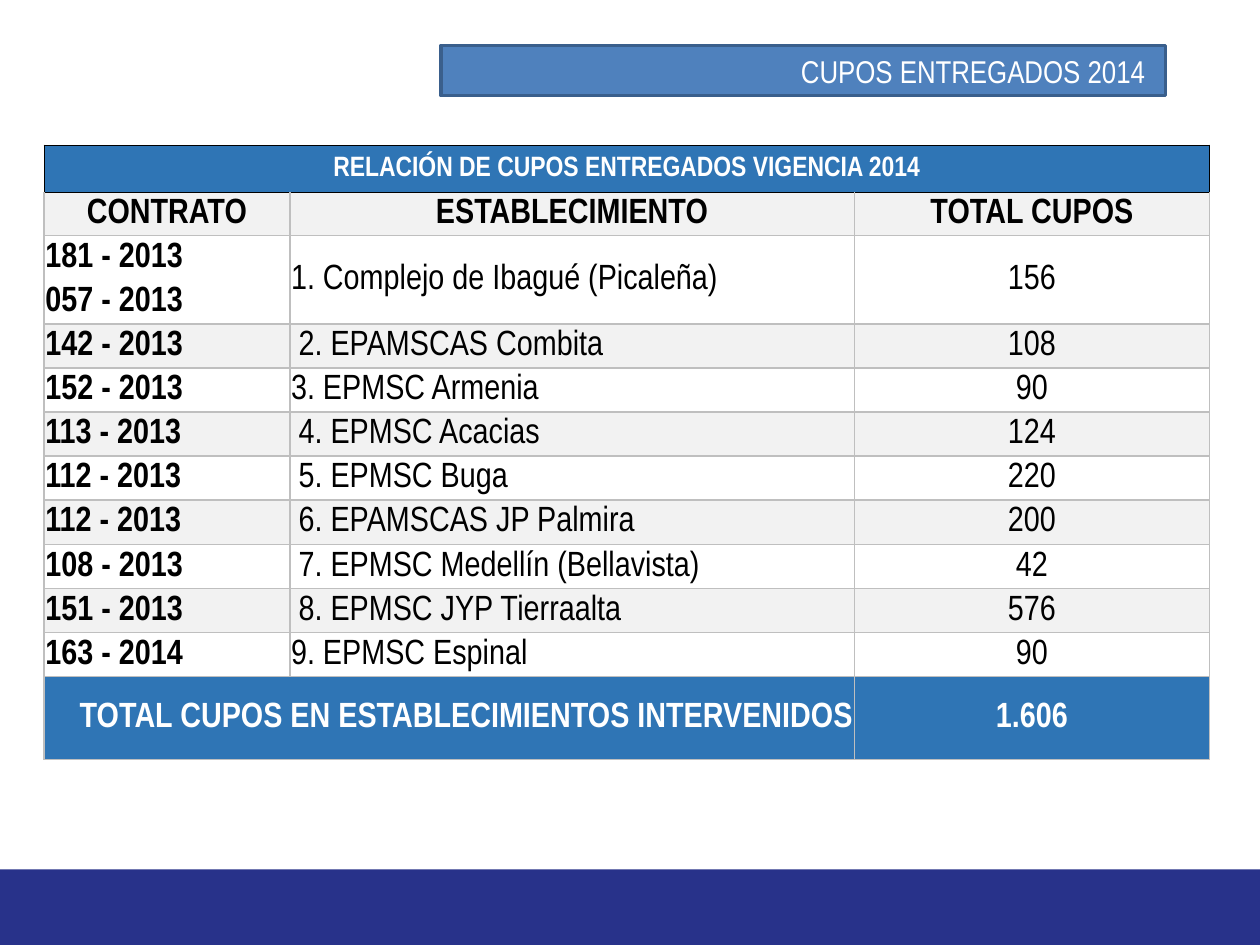
import pptx
import pptx.util
import pptx.dml.color
import pptx.enum.shapes
import pptx.enum.text
import lxml.etree
import pptx.oxml.ns

Inches, Pt = pptx.util.Inches, pptx.util.Pt
RGBColor = pptx.dml.color.RGBColor
ALIGN = pptx.enum.text.PP_ALIGN
MIDDLE = pptx.enum.text.MSO_ANCHOR.MIDDLE

# Content
HEADING = "CUPOS ENTREGADOS 2014"
TABLE_TITLE = "RELACIÓN DE CUPOS ENTREGADOS VIGENCIA 2014"
COLUMN_NAMES = ("CONTRATO", "ESTABLECIMIENTO", "TOTAL CUPOS")
CONTRACTS = [
    ("181 - 2013", "1. Complejo de Ibagué (Picaleña)", "156"),
    ("057 - 2013", "", ""),
    ("142 - 2013", "2. EPAMSCAS Combita", "108"),
    ("152 - 2013", "3. EPMSC Armenia", "90"),
    ("113 - 2013", "4. EPMSC Acacias", "124"),
    ("112 - 2013", "5. EPMSC Buga", "220"),
    ("112 - 2013", "6. EPAMSCAS JP Palmira", "200"),
    ("108 - 2013", "7. EPMSC Medellín (Bellavista)", "42"),
    ("151 - 2013", "8. EPMSC JYP Tierraalta", "576"),
    ("163 - 2014", "9. EPMSC Espinal", "90"),
]
TOTAL = ("TOTAL CUPOS EN ESTABLECIMIENTOS INTERVENIDOS", "", "1.606")
FLUSH_NUMBERS = ("1.", "3.", "9.")

# Format
FONT = "Arial Narrow"
WHITE = RGBColor(0xFF, 0xFF, 0xFF)
BLACK = RGBColor(0, 0, 0)
GREY = RGBColor(0xF2, 0xF2, 0xF2)
BORDER = RGBColor(0xBF, 0xBF, 0xBF)
TABLE_BLUE = RGBColor(0x2F, 0x75, 0xB5)
HEADING_BLUE = RGBColor(0x4F, 0x81, 0xBD)
HEADING_LINE = RGBColor(0x3A, 0x5F, 0x8C)
NAVY = RGBColor(0x28, 0x32, 0x8A)
COLUMN_WIDTHS = (1.95, 4.48, 2.82)
ROW_HEIGHTS = [0.38, 0.34] + [0.35] * len(CONTRACTS) + [0.66]
THIN_BLACK, GREY_LINE = (BLACK, 0.5), (BORDER, 1)

presentation = pptx.Presentation()
presentation.slide_width, presentation.slide_height = Inches(10), Inches(7.5)
slide = presentation.slides.add_slide(presentation.slide_layouts[6])


def add_rectangle(left, top, width, height, color):
    shape = slide.shapes.add_shape(
        pptx.enum.shapes.MSO_SHAPE.RECTANGLE,
        Inches(left), Inches(top), Inches(width), Inches(height))
    shape.shadow.inherit = False
    shape.fill.solid()
    shape.fill.fore_color.rgb = color
    shape.line.fill.background()
    return shape


def write(text_frame, text, size, color, bold, alignment):
    paragraph = text_frame.paragraphs[0]
    paragraph.text = text
    paragraph.alignment = alignment
    for name, value in {"name": FONT, "size": Pt(size), "bold": bold}.items():
        setattr(paragraph.font, name, value)
    paragraph.font.color.rgb = color


def add_border(cell, side, line):
    properties = cell._tc.get_or_add_tcPr()
    qn = pptx.oxml.ns.qn
    border = lxml.etree.SubElement(properties, qn(f"a:ln{side}"))
    if line is None:
        lxml.etree.SubElement(border, qn("a:noFill"))
        return
    color, width = line
    border.set("w", str(Pt(width)))
    fill = lxml.etree.SubElement(border, qn("a:solidFill"))
    lxml.etree.SubElement(fill, qn("a:srgbClr")).set("val", str(color))


# Footer band and heading
add_rectangle(0, 6.9, 10, 0.6, NAVY)
heading = add_rectangle(3.5, 0.36, 5.75, 0.4, HEADING_BLUE)
heading.line.color.rgb = HEADING_LINE
heading.line.width = Pt(2)
heading.text_frame.margin_right = Inches(0.16)
heading.text_frame.vertical_anchor = MIDDLE
write(heading.text_frame, HEADING, 18, WHITE, False, ALIGN.RIGHT)

# Table grid
rows = [(TABLE_TITLE, "", ""), COLUMN_NAMES, *CONTRACTS, TOTAL]
last = len(rows) - 1
table = slide.shapes.add_table(
    len(rows), len(COLUMN_WIDTHS), Inches(0.35), Inches(1.15),
    Inches(sum(COLUMN_WIDTHS)), Inches(sum(ROW_HEIGHTS))).table
table.first_row = table.horz_banding = False
for column, width in zip(table.columns, COLUMN_WIDTHS):
    column.width = Inches(width)
for row, height in zip(table.rows, ROW_HEIGHTS):
    row.height = Inches(height)

# Merged cells: title, first establishment with its quota, total label
for start, end in (((0, 0), (0, 2)), ((2, 1), (3, 1)),
                   ((2, 2), (3, 2)), ((last, 0), (last, 1))):
    table.cell(*start).merge(table.cell(*end))

# Table cells
for r, texts in enumerate(rows):
    for c, text in enumerate(texts):
        cell = table.cell(r, c)
        blue = r in (0, last)
        indented = c == 1 and 2 <= r < last and not text.startswith(FLUSH_NUMBERS)
        margins = {"margin_left": 0.07 if indented else 0.01,
                   "margin_top": 0.01, "margin_right": 0.01, "margin_bottom": 0}
        for name, value in margins.items():
            setattr(cell, name, Inches(value))
        cell.vertical_anchor = MIDDLE

        lines = dict.fromkeys("LRTB", THIN_BLACK if r == 0 else GREY_LINE)
        if r == 1:
            lines["T"] = THIN_BLACK
        if r == 2:
            lines["B"] = None
        if r == 3:
            lines["T"] = None
        for side, line in lines.items():
            add_border(cell, side, line)

        if blue or r == 1 or (r >= 4 and r % 2 == 0):
            cell.fill.solid()
            cell.fill.fore_color.rgb = TABLE_BLUE if blue else GREY
        else:
            cell.fill.background()

        if r < 2 or c == 2:
            alignment = ALIGN.CENTER
        else:
            alignment = ALIGN.RIGHT if r == last else ALIGN.LEFT
        write(cell.text_frame, text, 16 if r == 0 else 20,
              WHITE if blue else BLACK, blue or r == 1 or c == 0, alignment)

presentation.save("out.pptx")
